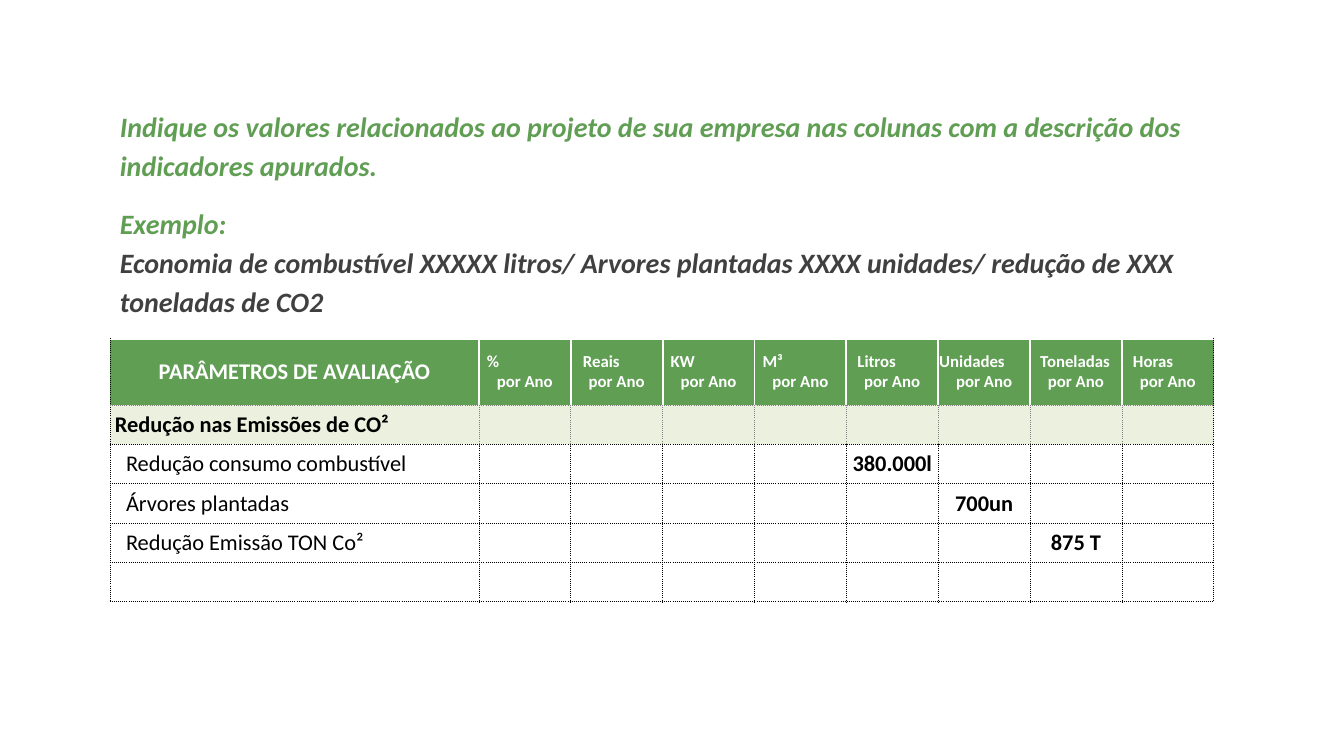
from dataclasses import dataclass

from lxml.etree import SubElement
from pptx import Presentation
from pptx.dml.color import RGBColor as Color
from pptx.enum.text import MSO_ANCHOR as Anchor, MSO_AUTO_SIZE as AutoSize, PP_ALIGN as Align
from pptx.oxml.ns import qn
from pptx.util import Inches, Pt


@dataclass(frozen=True)
class Theme:
    font: str = "Calibri"
    green: str = "609E54"
    pale: str = "EBF1DE"
    dark: str = "404040"
    gray: str = "808080"
    black: str = "000000"
    white: str = "FFFFFF"
    intro: int = 20
    body: int = 16
    unit: int = 12


theme = Theme()


def write(para, text, size=theme.body, color=theme.black, bold=True, italic=False,
          align=Align.LEFT, indent=0):
    if indent:
        para._p.get_or_add_pPr().set("marL", str(Inches(indent)))
    para.alignment = align
    span = para.add_run()
    span.text = text
    span.font.name = theme.font
    span.font.size = Pt(size)
    span.font.color.rgb = Color.from_string(color)
    span.font.bold = bold
    span.font.italic = italic


def set_borders(cell, **sides):
    """Give each side (L, R, T, B) a colour: white is solid, the others dotted."""
    properties = cell._tc.get_or_add_tcPr()
    for place, (side, color) in enumerate(sides.items()):
        solid = color == theme.white
        line = SubElement(properties, qn(f"a:ln{side}"), w=str(Pt(1.5 if solid else 0.5)))
        fill = SubElement(line, qn("a:solidFill"))
        SubElement(fill, qn("a:srgbClr"), val=color)
        SubElement(line, qn("a:prstDash"), val="solid" if solid else "sysDot")
        properties.insert(place, line)


deck = Presentation()
deck.slide_width, deck.slide_height = Inches(13.33), Inches(7.5)
page = deck.slides.add_slide(deck.slide_layouts[6])

# Column headings with the indent of their first line
units = [("%", 0.08), ("Reais", 0.12), ("KW", 0.08), ("M³", 0.08),
         ("Litros", 0.11), ("Unidades", 0.01), ("Toneladas", 0.1), ("Horas", 0.11)]
labels = {1: "Redução nas Emissões de CO²", 2: "Redução consumo combustível",
          3: "Árvores plantadas", 4: "Redução Emissão TON Co²"}
values = {(2, 5): "380.000l", (3, 6): "700un", (4, 7): "875 T"}
row_count, column_count = 6, len(units) + 1
left, table_width, label_width = 1.09, 10.95, 3.66
header_height, row_height = 0.66, 0.39

frame = page.shapes.add_table(row_count, column_count, Inches(left), Inches(3.36),
                              Inches(table_width),
                              Inches(header_height + row_height * (row_count - 1)))
table = frame.table
table.horz_banding = False
for index, column in enumerate(table.columns):
    column.width = Inches((table_width - label_width) / len(units) if index else label_width)

for row_index, row in enumerate(table.rows):
    row.height = Inches(row_height if row_index else header_height)
    row_fill = {0: theme.green, 1: theme.pale}.get(row_index, theme.white)
    inner = {0: theme.white, 1: theme.gray}.get(row_index, theme.black)
    top = inner if row_index < 2 else theme.black
    bottom = theme.gray if row_index == 0 else theme.black
    for column_index, cell in enumerate(row.cells):
        cell.margin_left = cell.margin_right = cell.margin_top = cell.margin_bottom = 0
        cell.vertical_anchor = Anchor.MIDDLE
        cell.fill.solid()
        cell.fill.fore_color.rgb = Color.from_string(row_fill)
        set_borders(cell,
                    L=inner if column_index else theme.black,
                    R=inner if column_index < column_count - 1 else theme.black,
                    T=top, B=bottom)
        para = cell.text_frame.paragraphs[0]
        if row_index == 0 and column_index == 0:
            write(para, "PARÂMETROS DE AVALIAÇÃO", color=theme.white, align=Align.CENTER)
        elif row_index == 0:
            unit, indent = units[column_index - 1]
            write(para, unit, size=theme.unit, color=theme.white, indent=indent)
            write(cell.text_frame.add_paragraph(), "por Ano", size=theme.unit,
                  color=theme.white, align=Align.CENTER)
        elif column_index == 0 and row_index in labels:
            cell.margin_left = Inches(0.05 if row_index == 1 else 0.16)
            write(para, labels[row_index], bold=row_index == 1)
        elif (row_index, column_index) in values:
            write(para, values[row_index, column_index], align=Align.CENTER)

intro = page.shapes.add_textbox(Inches(left), Inches(0.99), Inches(10.79), Inches(2.2)).text_frame
intro.word_wrap = True
intro.auto_size = AutoSize.SHAPE_TO_FIT_TEXT
request, example = intro.paragraphs[0], intro.add_paragraph()
for para in (request, example):
    para.line_spacing = 1.15
    para.space_after = Pt(4)
example.space_before = Pt(10)
write(request, "Indique os valores relacionados ao projeto de sua empresa nas colunas "
      "com a descrição dos indicadores apurados.",
      size=theme.intro, color=theme.green, italic=True)
write(example, "Exemplo:", size=theme.intro, color=theme.green, italic=True)
example.add_line_break()
write(example, "Economia de combustível XXXXX litros/ Arvores plantadas XXXX unidades/ "
      "redução de XXX toneladas de CO2",
      size=theme.intro, color=theme.dark, italic=True)

deck.save("out.pptx")
